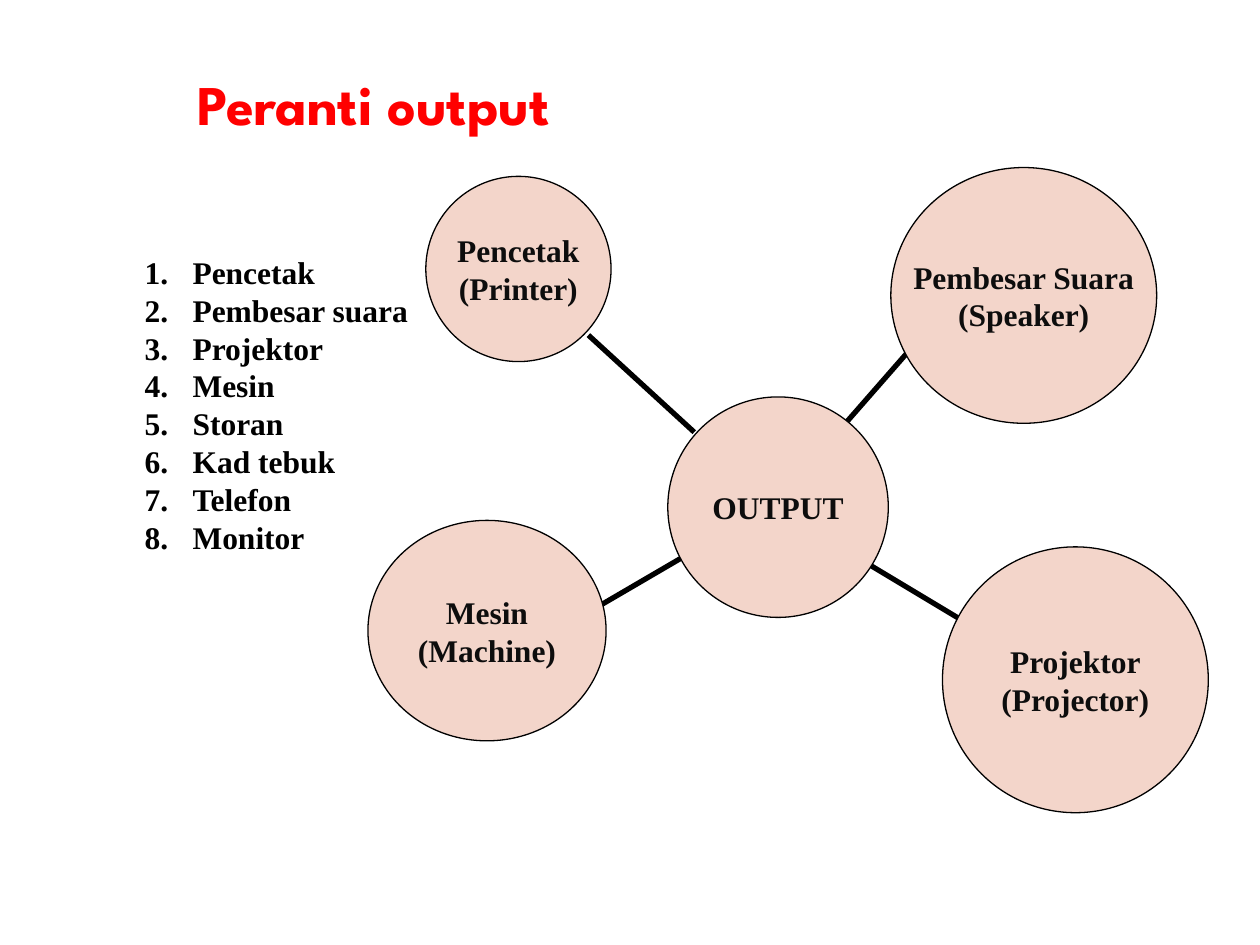
from pptx import Presentation
from pptx.dml.color import RGBColor
from pptx.enum.shapes import MSO_CONNECTOR as Connector, MSO_SHAPE as Shape
from pptx.enum.text import MSO_ANCHOR as Anchor, MSO_AUTO_SIZE as AutoSize, PP_ALIGN as Align
from pptx.oxml.ns import qn
from pptx.util import Inches, Pt
from lxml.etree import SubElement


def color(value):
    return RGBColor.from_string(value)


def write(frame, lines, size=18, font="Times New Roman", ink="000000",
          align=Align.LEFT, wrap=False, numbered=False):
    frame.word_wrap = wrap
    for index, line in enumerate(lines):
        para = frame.paragraphs[0] if index == 0 else frame.add_paragraph()
        para.alignment = align
        if numbered:
            props = para._p.get_or_add_pPr()
            props.set("marL", str(Inches(0.38)))
            props.set("indent", str(-Inches(0.38)))
            SubElement(props, qn("a:buFont")).set("typeface", font)
            SubElement(props, qn("a:buAutoNum")).set("type", "arabicPeriod")
        span = para.add_run()
        span.text = line
        span.font.size = Pt(size)
        span.font.name = font
        span.font.bold = True
        span.font.color.rgb = color(ink)


class DiagramPage:
    fill = "F3D5CA"
    outline = "000000"
    label_ink = "0D0D0D"

    def __init__(self, deck):
        self.page = deck.slides.add_slide(deck.slide_layouts[6])

    def text(self, left, top, width, height, lines, grow=False, **style):
        box = self.page.shapes.add_textbox(*map(Inches, (left, top, width, height)))
        write(box.text_frame, lines, **style)
        if grow:
            box.text_frame.auto_size = AutoSize.SHAPE_TO_FIT_TEXT

    def circle(self, left, top, width, height, lines):
        circle = self.page.shapes.add_shape(
            Shape.OVAL, *map(Inches, (left, top, width, height)))
        circle.shadow.inherit = False
        circle.fill.solid()
        circle.fill.fore_color.rgb = color(self.fill)
        circle.line.color.rgb = color(self.outline)
        circle.line.width = Pt(0.75)
        circle.text_frame.vertical_anchor = Anchor.MIDDLE
        write(circle.text_frame, lines, ink=self.label_ink, align=Align.CENTER)

    def spoke(self, start_x, start_y, end_x, end_y):
        spoke = self.page.shapes.add_connector(
            Connector.STRAIGHT, *map(Inches, (start_x, start_y, end_x, end_y)))
        spoke.line.color.rgb = color(self.outline)
        spoke.line.width = Pt(3)
        SubElement(spoke._element.spPr, qn("a:effectLst"))


def main():
    deck = Presentation()
    deck.slide_width, deck.slide_height = Inches(10), Inches(7.5)
    diagram = DiagramPage(deck)

    devices = ["Pencetak", "Pembesar suara", "Projektor", "Mesin",
               "Storan", "Kad tebuk", "Telefon", "Monitor"]
    diagram.text(1.05, 1.96, 2.31, 2.83, devices, grow=True, numbered=True)

    spokes = [
        (5.51, 3.43, 4.67, 2.66),
        (6.71, 3.36, 7.2, 2.8),
        (6.78, 4.41, 7.83, 5.04),
        (5.44, 4.41, 4.6, 4.9),
    ]
    for ends in spokes:
        diagram.spoke(*ends)

    circles = [
        (3.38, 1.4, 1.47, 1.47, ["Pencetak", "(Printer)"]),
        (7.07, 1.33, 2.11, 2.03, ["Pembesar Suara", "(Speaker)"]),
        (5.3, 3.15, 1.75, 1.75, ["OUTPUT"]),
        (2.92, 4.13, 1.89, 1.75, ["Mesin", "(Machine)"]),
        (7.48, 4.34, 2.11, 2.11, ["Projektor", "(Projector)"]),
    ]
    for circle in circles:
        diagram.circle(*circle)

    diagram.text(1.47, 0.5, 7.74, 0.47, ["Peranti output"], size=32,
                 font="League Spartan", ink="FF0000", wrap=True)
    deck.save("out.pptx")


if __name__ == "__main__":
    main()
